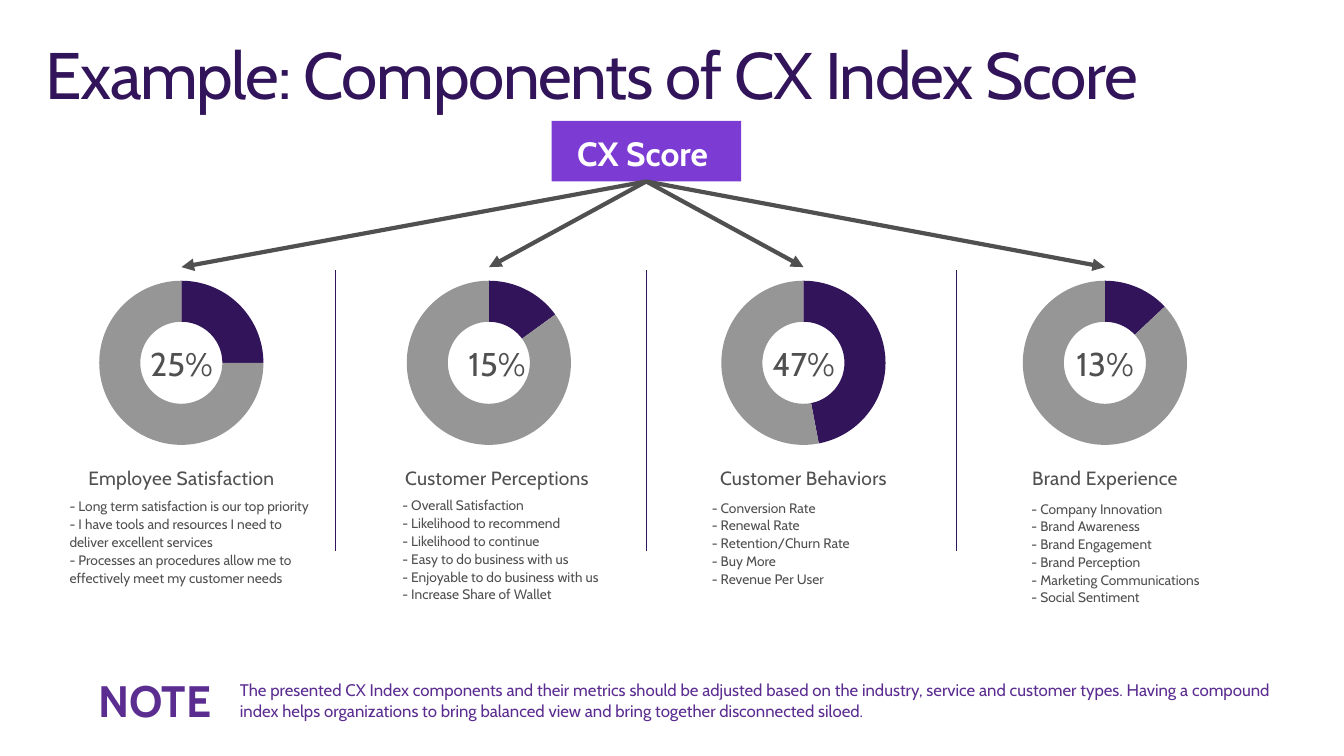
from dataclasses import dataclass

from lxml.etree import SubElement
from pptx import Presentation
from pptx.chart.data import CategoryChartData
from pptx.dml.color import RGBColor
from pptx.enum.chart import XL_CHART_TYPE
from pptx.enum.shapes import MSO_CONNECTOR, MSO_SHAPE
from pptx.enum.text import MSO_ANCHOR, PP_ALIGN
from pptx.oxml import parse_xml
from pptx.oxml.ns import nsdecls, qn
from pptx.shapes.autoshape import Shape
from pptx.slide import Slide
from pptx.util import Inches, Pt

FONT = "Cabin"
COLOURS = {
    "indigo": "32145A",
    "violet": "7C3BD3",
    "purple": "5C2D91",
    "text": "505050",
    "ring": "969696",
    "white": "FFFFFF",
}

CHART_WIDTH, CHART_HEIGHT, CHART_TOP = 2.07, 1.9, 2.65
RING_DIAMETER = 1.63
SCORE_X, SCORE_BOTTOM = 6.41, 1.8
DIVIDER_GAP = 3.08


@dataclass(frozen=True)
class Component:
    name: str
    percent: int
    ring_x: float
    label_x: float
    list_left: float
    list_top: float
    list_width: float
    metrics: tuple[str, ...]


COMPONENTS = (
    Component("Employee Satisfaction", 25, 1.8, 1.8, 0.69, 4.93, 2.5, (
        "Long term satisfaction is our top priority",
        "I have tools and resources I need to deliver excellent services",
        "Processes an procedures allow me to effectively meet my customer needs",
    )),
    Component("Customer Perceptions", 15, 4.85, 4.93, 3.99, 4.92, 2.12, (
        "Overall Satisfaction", "Likelihood to recommend",
        "Likelihood to continue", "Easy to do business with us",
        "Enjoyable to do business with us", "Increase Share of Wallet",
    )),
    Component("Customer Behaviors", 47, 7.97, 7.97, 7.06, 4.94, 1.77, (
        "Conversion Rate", "Renewal Rate", "Retention/Churn Rate",
        "Buy More", "Revenue Per User",
    )),
    Component("Brand Experience", 13, 10.96, 10.96, 10.23, 4.95, 1.77, (
        "Company Innovation", "Brand Awareness", "Brand Engagement",
        "Brand Perception", "Marketing Communications", "Social Sentiment",
    )),
)


def colour(name: str) -> RGBColor:
    return RGBColor.from_string(COLOURS[name])


def write(box: Shape, text: str, *, size: float, ink: str = "text",
          bold: bool = False, align: PP_ALIGN = PP_ALIGN.LEFT,
          leading: float | Pt | None = None, after: float = 0,
          tracking: float = 0, inset: tuple[float, float] = (0, 0)) -> None:
    """Fill a box with one paragraph; newlines become line breaks."""
    frame = box.text_frame
    frame.word_wrap = True
    frame.vertical_anchor = MSO_ANCHOR.TOP
    frame.margin_left = frame.margin_right = Inches(inset[0])
    frame.margin_top = frame.margin_bottom = Inches(inset[1])
    para = frame.paragraphs[0]
    para.alignment = align
    para.space_after = Pt(after)
    if leading is not None:
        para.line_spacing = leading
    for index, line in enumerate(text.split("\n")):
        if index:
            para.add_line_break()
        span = para.add_run()
        span.text = line
        span.font.name = FONT
        span.font.size = Pt(size)
        span.font.bold = bold
        span.font.color.rgb = colour(ink)
        if tracking:
            span._r.get_or_add_rPr().set("spc", str(round(tracking * 100)))


def add_text(page: Slide, left: float, top: float, width: float,
             height: float, text: str, **style) -> None:
    box = page.shapes.add_textbox(
        Inches(left), Inches(top), Inches(width), Inches(height))
    write(box, text, **style)


def add_line(page: Slide, start: tuple[float, float], end: tuple[float, float],
             *, ink: str, weight: float, arrow: bool = False) -> None:
    line = page.shapes.add_connector(
        MSO_CONNECTOR.STRAIGHT, *(Inches(value) for value in start + end))
    line.line.color.rgb = colour(ink)
    line.line.width = Pt(weight)
    if arrow:
        SubElement(line.line._get_or_add_ln(), qn("a:tailEnd"), type="triangle")
    SubElement(line._element.spPr, qn("a:effectLst"))


def add_ring(page: Slide, component: Component) -> None:
    data = CategoryChartData()
    data.categories = ["1", "2"]
    data.add_series("Series 1", (component.percent, 100 - component.percent))
    chart = page.shapes.add_chart(
        XL_CHART_TYPE.DOUGHNUT,
        Inches(component.ring_x - CHART_WIDTH / 2), Inches(CHART_TOP),
        Inches(CHART_WIDTH), Inches(CHART_HEIGHT), data).chart
    chart.has_title = False
    chart.has_legend = False
    chart.font.name = FONT
    chart.font.size = Pt(10)
    chart.font.color.rgb = colour("text")
    plot = chart.plots[0]
    plot.vary_by_categories = True
    for index, ink in enumerate(("indigo", "ring")):
        point = plot.series[0].points[index]
        point.format.fill.solid()
        point.format.fill.fore_color.rgb = colour(ink)
        point.format.line.fill.background()
    area = chart._chartSpace.chart.plotArea
    area.find(".//" + qn("c:holeSize")).set("val", "75")
    for layout in area.findall(qn("c:layout")):
        area.remove(layout)
    width, height = RING_DIAMETER / CHART_WIDTH, RING_DIAMETER / CHART_HEIGHT
    area.insert(0, parse_xml(
        f'<c:layout {nsdecls("c")}><c:manualLayout>'
        '<c:layoutTarget val="inner"/>'
        '<c:xMode val="edge"/><c:yMode val="edge"/>'
        f'<c:x val="{(1 - width) / 2:.3f}"/><c:y val="{(1 - height) / 2:.3f}"/>'
        f'<c:w val="{width:.3f}"/><c:h val="{height:.3f}"/>'
        '</c:manualLayout></c:layout>'))


def add_component(page: Slide, component: Component) -> None:
    add_ring(page, component)
    add_text(page, component.label_x - 1.34, 4.63, 2.68, 0.23, component.name,
             size=13.7, align=PP_ALIGN.CENTER, tracking=0.2)
    metrics = "\n".join(f"- {metric}" for metric in component.metrics)
    add_text(page, component.list_left, component.list_top,
             component.list_width, 1.09, metrics,
             size=9.8, leading=Pt(12.7), after=5.9)
    add_text(page, component.label_x - 0.42, 3.41, 0.84, 0.4,
             f"{component.percent}%", size=23.5, align=PP_ALIGN.CENTER)


def add_score_box(page: Slide) -> None:
    box = page.shapes.add_shape(MSO_SHAPE.RECTANGLE, Inches(5.47), Inches(1.2),
                                Inches(1.88), Inches(0.6))
    box.shadow.inherit = False
    box.fill.solid()
    box.fill.fore_color.rgb = colour("violet")
    box.line.fill.background()
    write(box, "CX Score ", size=24, ink="white", bold=True,
          align=PP_ALIGN.CENTER, leading=0.9, inset=(0.2, 0.16))


def main() -> None:
    deck = Presentation()
    deck.slide_width, deck.slide_height = Inches(13.33), Inches(7.5)
    page = deck.slides.add_slide(deck.slide_layouts[6])

    add_text(page, 0.29, 0.32, 12.75, 0.98,
             "Example: Components of CX Index Score", size=47, ink="indigo",
             leading=0.9, tracking=-1, inset=(0.16, 0.1))
    for component in COMPONENTS:
        add_component(page, component)
    for step in (-1, 0, 1):
        x = SCORE_X + step * DIVIDER_GAP
        add_line(page, (x, 2.68), (x, 5.47), ink="indigo", weight=0.75)
    add_score_box(page)
    for component in COMPONENTS:
        add_line(page, (SCORE_X, SCORE_BOTTOM), (component.ring_x, CHART_TOP),
                 ink="text", weight=3, arrow=True)
    add_text(page, 0.77, 6.68, 1.53, 0.53, "NOTE", size=31.4, ink="purple",
             bold=True, align=PP_ALIGN.CENTER)
    add_text(page, 2.38, 6.74, 10.23, 0.41,
             "The presented CX Index components and their metrics should be "
             "adjusted based on the industry, service and customer types. "
             "Having a compound index helps organizations to bring balanced "
             "view and bring together disconnected siloed.",
             size=12, ink="purple", align=PP_ALIGN.JUSTIFY,
             leading=Pt(14.7), after=11.8)
    deck.save("out.pptx")


if __name__ == "__main__":
    main()
